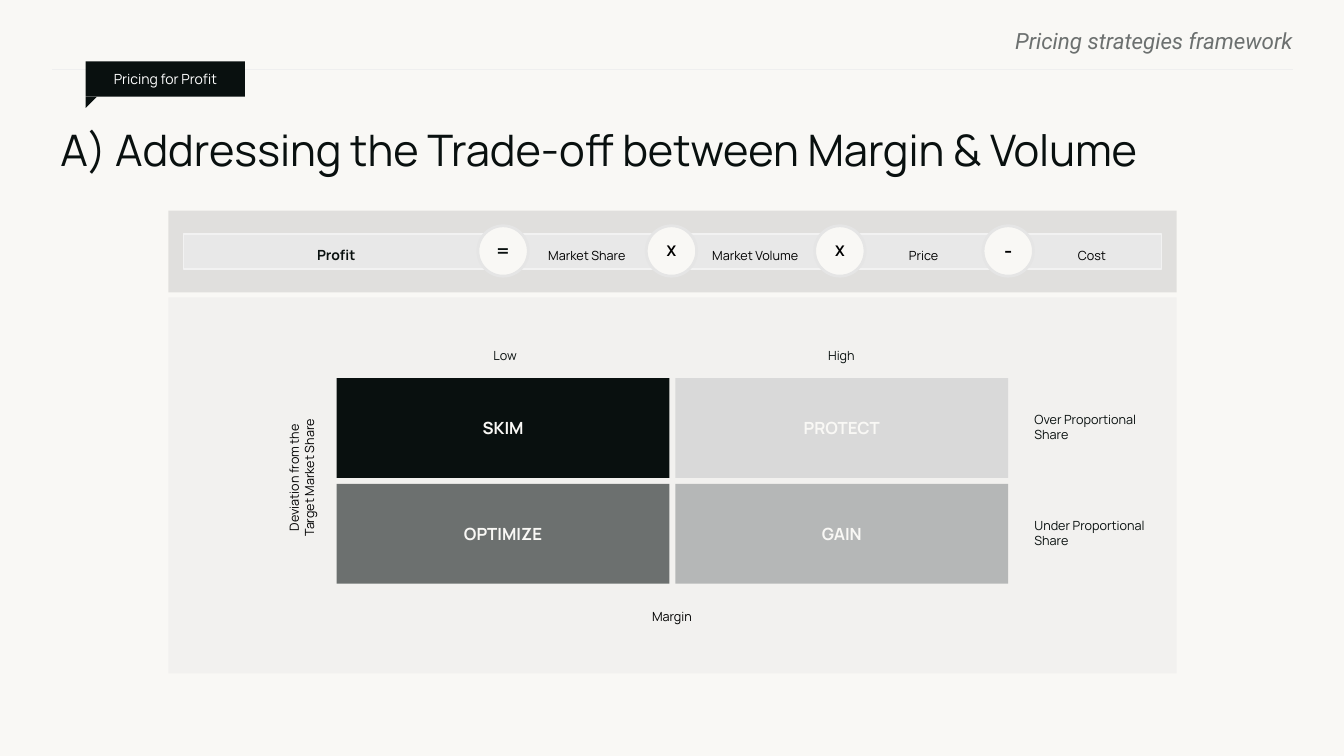
from dataclasses import dataclass
from typing import Optional

from lxml.etree import SubElement
from pptx import Presentation
from pptx.dml.color import RGBColor
from pptx.enum.shapes import MSO_CONNECTOR, MSO_SHAPE
from pptx.enum.text import MSO_ANCHOR, MSO_AUTO_SIZE, PP_ALIGN
from pptx.oxml.ns import qn
from pptx.util import Inches, Pt


@dataclass(frozen=True)
class Theme:
    paper: str = "F9F8F5"
    ink: str = "09100F"
    black: str = "000000"
    white: str = "FFFFFF"
    grey: str = "6C706F"
    rule: str = "EFEFEF"
    term_fill: str = "E8E8E8"
    term_line: str = "F2F2F2"
    ring: str = "E5E5E5"
    formula_panel: str = "7F7F7F"
    matrix_panel: str = "D8D8D8"
    protect: str = "D9D9D9"
    gain: str = "B5B7B7"
    font: str = "Manrope"
    header_font: str = "Roboto"
    title_size: float = 31
    header_size: float = 16
    sign_size: float = 14
    quadrant_size: float = 12
    times_size: float = 10.5
    tag_size: float = 10
    label_size: float = 9


T = Theme()


@dataclass(frozen=True)
class Box:
    x: float
    y: float
    w: float
    h: float

    def lengths(self) -> list:
        return [Inches(v) for v in (self.x, self.y, self.w, self.h)]


@dataclass(frozen=True)
class Style:
    size: float = T.label_size
    color: str = T.ink
    name: str = T.font
    bold: bool = False
    italic: bool = False
    align: PP_ALIGN = PP_ALIGN.CENTER
    spacing: float = 1.0


@dataclass(frozen=True)
class Label:
    text: str
    box: Box
    style: Style = Style()
    wrap: bool = True
    rotation: float = 0


@dataclass(frozen=True)
class Operator:
    text: str
    size: float
    color: str = T.black


@dataclass(frozen=True)
class Quadrant:
    text: str
    fill: str
    col: int
    row: int


def write(s, text: str, style: Style, inset: tuple = (0, 0), **frame) -> None:
    tf = s.text_frame
    side, top = (Inches(v) for v in inset)
    values = {"margin_left": side, "margin_right": side, "margin_top": top,
              "margin_bottom": top, "word_wrap": True, **frame}
    for key, value in values.items():
        setattr(tf, key, value)
    tf.text = text
    for p in tf.paragraphs:
        p.alignment, p.line_spacing = style.align, style.spacing
        font = p.runs[0].font
        for key in ("name", "bold", "italic"):
            setattr(font, key, getattr(style, key))
        font.size = Pt(style.size)
        font.color.rgb = RGBColor.from_string(style.color)


def add_box(shapes, box: Box, fill: str, kind: MSO_SHAPE = MSO_SHAPE.RECTANGLE,
            line: Optional[str] = None, width: float = 1, alpha: int = 100):
    s = shapes.add_shape(kind, *box.lengths())
    s.shadow.inherit = False
    s.fill.solid()
    s.fill.fore_color.rgb = RGBColor.from_string(fill)
    if alpha < 100:
        clr = s.fill._xPr.find(qn("a:solidFill"))[0]
        SubElement(clr, qn("a:alpha")).set("val", str(alpha * 1000))
    if line:
        s.line.color.rgb = RGBColor.from_string(line)
        s.line.width = Pt(width)
    else:
        s.line.fill.background()
    return s


def add_label(shapes, label: Label) -> None:
    s = shapes.add_textbox(*label.box.lengths())
    s.rotation = label.rotation
    write(s, label.text, label.style, (0, 0.05), word_wrap=label.wrap,
          auto_size=MSO_AUTO_SIZE.SHAPE_TO_FIT_TEXT)


MIDDLE = {"vertical_anchor": MSO_ANCHOR.MIDDLE}
LEFT = Style(align=PP_ALIGN.LEFT)
BLACK = Style(color=T.black)

# Formula: bars and circles share one pitch
TERM_PITCH = 1.67
TERMS = ["Market Share", "Market Volume", "Price", "Cost"]
OPERATORS = [Operator("=", T.sign_size, T.ink), Operator("X", T.times_size),
             Operator("X", T.times_size), Operator("-", T.sign_size)]

# Matrix: two columns by two rows
COL_PITCH, ROW_PITCH = 3.36, 1.05
QUADRANTS = [Quadrant("SKIM", T.ink, 0, 0), Quadrant("PROTECT", T.protect, 1, 0),
             Quadrant("OPTIMIZE", T.grey, 0, 1), Quadrant("GAIN", T.gain, 1, 1)]
LABELS = [
    Label("High", Box(8.2, 3.4, 0.29, 0.25), wrap=False),
    Label("Low", Box(4.89, 3.4, 0.24, 0.25), wrap=False),
    Label("Over Proportional\nShare", Box(10.26, 4.04, 1.36, 0.4), LEFT),
    Label("Under Proportional\nShare", Box(10.26, 5.09, 1.18, 0.4), LEFT),
    Label("Margin", Box(6.2, 5.99, 0.93, 0.25), BLACK),
    Label("Deviation from the Target Market Share", Box(2.31, 4.54, 1.36, 0.4),
          BLACK, rotation=270),
]


def add_header(shapes) -> None:
    s = shapes.add_textbox(*Box(7.68, 0.27, 5.14, 0.24).lengths())
    write(s, "Pricing strategies framework",
          Style(T.header_size, T.grey, T.header_font, italic=True, align=PP_ALIGN.RIGHT))
    rule = shapes.add_connector(MSO_CONNECTOR.STRAIGHT, Inches(12.82), Inches(0.69),
                                Inches(0.52), Inches(0.69))
    rule.line.color.rgb = RGBColor.from_string(T.rule)
    rule.line.width = Pt(0.75)
    SubElement(rule._element.spPr, qn("a:effectLst"))
    # Tag with its folded corner
    tag = shapes.add_group_shape().shapes
    s = add_box(tag, Box(0.85, 0.61, 1.58, 0.35), T.ink)
    write(s, "Pricing for Profit", Style(T.tag_size, T.white), (0.1, 0.05), **MIDDLE)
    add_box(tag, Box(0.85, 0.96, 0.11, 0.11), T.ink, MSO_SHAPE.RIGHT_TRIANGLE).rotation = 90
    # Title
    s = shapes.add_textbox(*Box(0.6, 1.22, 12.2, 0.68).lengths())
    write(s, "A) Addressing the Trade-off between Margin & Volume",
          Style(T.title_size, align=PP_ALIGN.LEFT))


def add_formula(shapes) -> None:
    add_box(shapes, Box(1.67, 2.09, 10, 0.81), T.formula_panel, alpha=20)
    bars = [("Profit", 1.82, 3.03, Style(T.tag_size, bold=True, spacing=1.38))]
    bars += [(text, 5.13 + i * TERM_PITCH, 1.38, Style(color=T.black, spacing=1.53))
             for i, text in enumerate(TERMS)]
    for text, x, w, style in bars:
        s = add_box(shapes, Box(x, 2.32, w, 0.35), T.term_fill, line=T.term_line)
        write(s, text, style, **MIDDLE)
    for i, op in enumerate(OPERATORS):
        s = add_box(shapes, Box(4.74 + i * TERM_PITCH, 2.24, 0.5, 0.5), T.paper,
                    MSO_SHAPE.OVAL, T.ring, 2)
        write(s, op.text, Style(op.size, op.color, bold=True), **MIDDLE)


def add_matrix(shapes) -> None:
    add_box(shapes, Box(1.67, 2.95, 10, 3.73), T.matrix_panel, alpha=20)
    for q in QUADRANTS:
        box = Box(3.34 + q.col * COL_PITCH, 3.75 + q.row * ROW_PITCH, 3.3, 0.99)
        s = add_box(shapes, box, q.fill)
        write(s, q.text, Style(T.quadrant_size, T.paper, bold=True), (0.1, 0.05), **MIDDLE)
    for label in LABELS:
        add_label(shapes, label)


def main() -> None:
    prs = Presentation()
    prs.slide_width, prs.slide_height = Inches(13.33), Inches(7.5)
    slide = prs.slides.add_slide(prs.slide_layouts[6])
    slide.background.fill.solid()
    slide.background.fill.fore_color.rgb = RGBColor.from_string(T.paper)
    for draw in (add_header, add_formula, add_matrix):
        draw(slide.shapes)
    prs.save("out.pptx")


if __name__ == "__main__":
    main()
